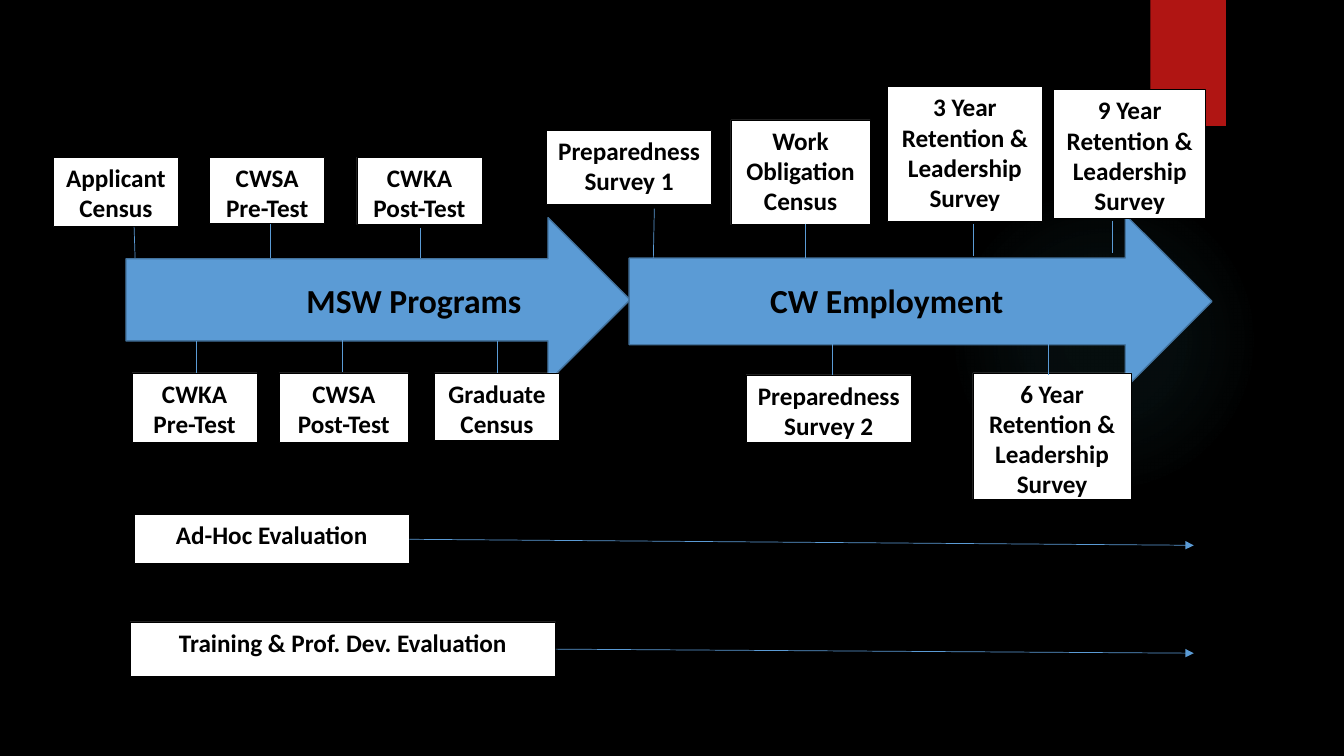
from lxml import etree
from pptx import Presentation
from pptx import util as u
from pptx.dml.color import RGBColor
from pptx.enum import shapes, text
from pptx.oxml import parse_xml
from pptx.oxml.ns import nsdecls, qn

PX = u.Inches(1) // 100
BLACK = RGBColor(0x00, 0x00, 0x00)
WHITE = RGBColor(0xFF, 0xFF, 0xFF)
RED = RGBColor(0xB0, 0x15, 0x13)
BLUE = RGBColor(0x5B, 0x9B, 0xD5)
DARK_BLUE = RGBColor(0x43, 0x73, 0x9E)
GLOW = RGBColor(0x50, 0xB9, 0xC1)
GLOW_STOPS = [(0, 7), (36, 6), (69, 0)]

PHASES = [
    ("MSW Programs", (125, 216, 500, 163), (234, 270, 353, 49)),
    ("CW Employment", (624, 213, 578, 172), (750, 270, 259, 47)),
]
BOXES = [
    (["Applicant Census"], (53, 156, 124, 69)),
    (["CWSA", "Pre-Test"], (208, 156, 114, 66)),
    (["CWKA Post-Test"], (354, 156, 124, 67)),
    (["Preparedness Survey 1"], (542, 129, 164, 74)),
    (["Work Obligation Census"], (725, 119, 138, 104)),
    (["3 Year", "Retention & Leadership Survey"], (880, 86, 154, 134)),
    (["9 Year", "Retention & Leadership Survey"], (1045, 89, 151, 128)),
    (["CWKA Pre-Test"], (131, 370, 124, 69)),
    (["CWSA Post-Test"], (277, 370, 128, 69)),
    (["Graduate Census"], (431, 370, 124, 67)),
    (["Preparedness Survey 2"], (740, 372, 164, 67)),
    (["6 Year", "Retention & Leadership Survey"], (965, 370, 157, 125)),
    (["Ad-Hoc Evaluation"], (133, 510, 273, 49)),
    (["Training & Prof. Dev. Evaluation"], (129, 617, 422, 54)),
]
STEMS = [
    (133, 225, 134, 256), (268, 222, 268, 256), (417, 226, 417, 256),
    (649, 207, 648, 256), (799, 222, 799, 256), (965, 222, 965, 254),
    (1103, 219, 1103, 251), (195, 338, 195, 370), (340, 336, 340, 369),
    (493, 338, 493, 370), (826, 332, 826, 372), (1040, 332, 1040, 372),
]
TIMELINES = [(406, 535, 1184, 541), (551, 644, 1184, 648)]


def scaled(lengths):
    return [length * PX for length in lengths]


def add_block(slide, kind, place, fill, line=None, width=0.5):
    shape = slide.shapes.add_shape(kind, *scaled(place))
    shape.shadow.inherit = False
    shape.fill.solid()
    shape.fill.fore_color.rgb = fill
    if line is None:
        shape.line.fill.background()
    else:
        shape.line.color.rgb = line
        shape.line.width = u.Pt(width)
    return shape


def write(shape, lines, size, spacing=1.0):
    frame = shape.text_frame
    frame.word_wrap = True
    frame.vertical_anchor = text.MSO_ANCHOR.TOP
    frame.text = "\n".join(lines)
    for paragraph in frame.paragraphs:
        paragraph.alignment = text.PP_ALIGN.CENTER
        paragraph.line_spacing = spacing
        paragraph.font.name = "Calibri"
        paragraph.font.size = u.Pt(size)
        paragraph.font.bold = True
        paragraph.font.color.rgb = BLACK


def add_line(slide, ends, arrow=False):
    connector = slide.shapes.add_connector(shapes.MSO_CONNECTOR.STRAIGHT, *scaled(ends))
    connector.line.color.rgb = BLUE
    connector.line.width = u.Pt(0.5)
    properties = connector._element.spPr
    if arrow:
        etree.SubElement(properties.find(qn("a:ln")), qn("a:tailEnd"), type="triangle")
    etree.SubElement(properties, qn("a:effectLst"))


def add_glow(slide):
    glow = add_block(slide, shapes.MSO_SHAPE.OVAL, (941, 183, 308, 308), GLOW)
    stops = "".join(
        f'<a:gs pos="{position * 1000}"><a:srgbClr val="{GLOW}">'
        f'<a:alpha val="{opacity * 1000}"/></a:srgbClr></a:gs>'
        for position, opacity in GLOW_STOPS
    )
    gradient = parse_xml(
        f'<a:gradFill {nsdecls("a")}><a:gsLst>{stops}</a:gsLst><a:path path="circle">'
        '<a:fillToRect l="50000" t="50000" r="50000" b="50000"/></a:path></a:gradFill>'
    )
    properties = glow._element.spPr
    properties.replace(properties.find(qn("a:solidFill")), gradient)


def main():
    presentation = Presentation()
    presentation.slide_width, presentation.slide_height = scaled((1333, 750))
    slide = presentation.slides.add_slide(presentation.slide_layouts[6])
    slide.background.fill.solid()
    slide.background.fill.fore_color.rgb = BLACK

    add_glow(slide)
    add_block(slide, shapes.MSO_SHAPE.RECTANGLE, (1141, 0, 75, 125), RED)
    for _, place, _ in PHASES:
        add_block(slide, shapes.MSO_SHAPE.RIGHT_ARROW, place, BLUE, DARK_BLUE, 1)
    for lines, place in BOXES:
        box = add_block(slide, shapes.MSO_SHAPE.RECTANGLE, place, WHITE, BLACK)
        write(box, lines, 18)
    for ends in STEMS:
        add_line(slide, ends)
    for ends in TIMELINES:
        add_line(slide, ends, arrow=True)
    for label, _, place in PHASES:
        write(slide.shapes.add_textbox(*scaled(place)), [label], 24, 1.07)

    presentation.save("out.pptx")


if __name__ == "__main__":
    main()
